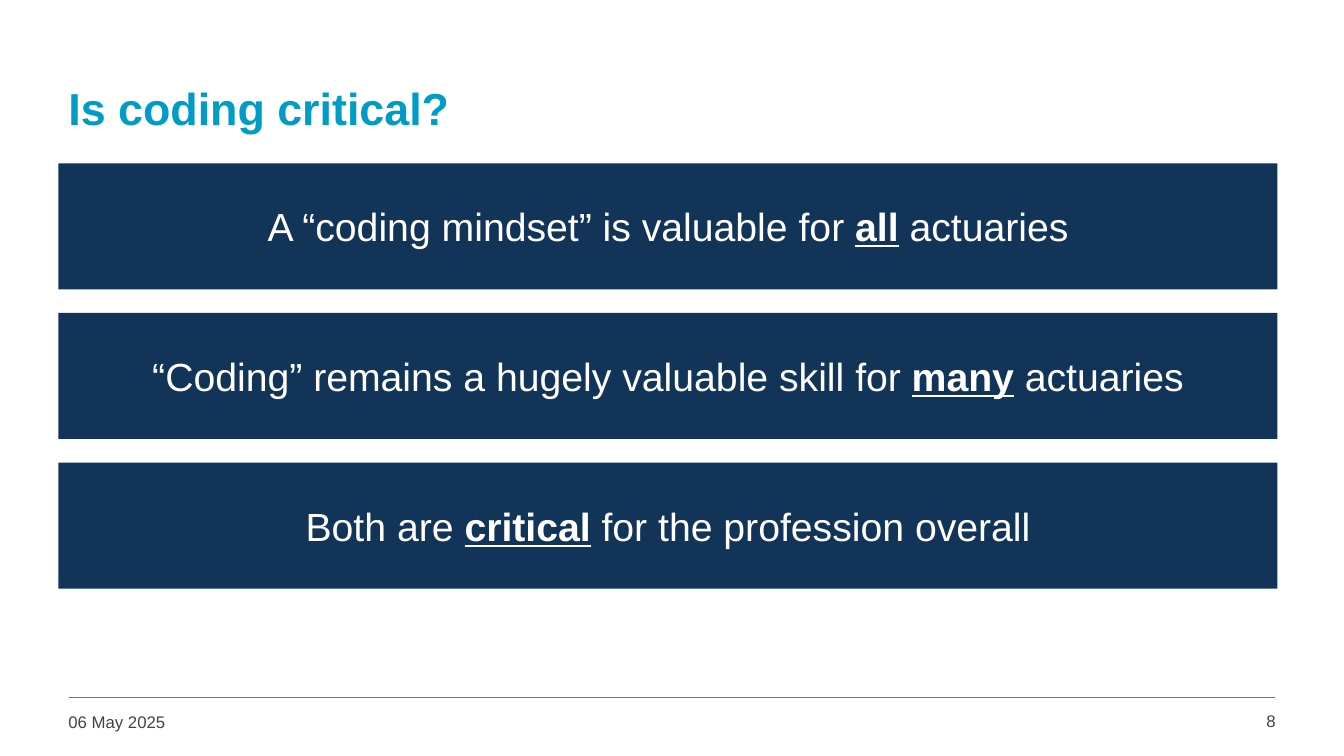
"""Build the slide that answers whether coding is critical for actuaries."""
from lxml import etree
from pptx import Presentation
from pptx import util as u
from pptx.dml.color import RGBColor
from pptx.enum import shapes, text
from pptx.oxml.ns import qn

TITLE = "Is coding critical?"
DATE = "06 May 2025"
PAGE = "8"
MESSAGES = [
    ("A “coding mindset” is valuable for ", "all", " actuaries"),
    ("“Coding” remains a hugely valuable skill for ", "many", " actuaries"),
    ("Both are ", "critical", " for the profession overall"),
]
COLOURS = {"accent": "009CC8", "navy": "113458", "white": "FFFFFF", "grey": "3F4548"}
LEFT, WIDTH = 0.58, 12.09
BAR_TOP, BAR_HEIGHT, BAR_STEP = 1.62, 1.25, 1.485
RULE_LEFT, RULE_RIGHT, RULE_Y = 0.68, 12.65, 6.92


def colour(name):
    return RGBColor.from_string(COLOURS[name])


def write(shape, parts, size, ink, bold=False, align=text.PP_ALIGN.LEFT,
          anchor=text.MSO_ANCHOR.MIDDLE):
    """Fill a shape with one paragraph; the second of its parts is emphasised."""
    frame = shape.text_frame
    frame.word_wrap = True
    frame.vertical_anchor = anchor
    paragraph = frame.paragraphs[0]
    paragraph.alignment = align
    for index, part in enumerate(parts):
        run = paragraph.add_run()
        run.text = part
        run.font.name = "Arial"
        run.font.size = u.Pt(size)
        run.font.color.rgb = colour(ink)
        run.font.bold = bold or index == 1
        run.font.underline = index == 1


def main():
    deck = Presentation()
    deck.slide_width, deck.slide_height = u.Inches(13.33), u.Inches(7.5)
    slide = deck.slides.add_slide(deck.slide_layouts[6])

    def place(*box):
        return [u.Inches(length) for length in box]

    rule = slide.shapes.add_connector(
        shapes.MSO_CONNECTOR.STRAIGHT, *place(RULE_LEFT, RULE_Y, RULE_RIGHT, RULE_Y))
    rule.line.color.rgb = colour("accent")
    rule.line.width = u.Pt(1)
    etree.SubElement(rule._element.spPr, qn("a:effectLst"))

    title = slide.shapes.add_textbox(*place(LEFT, 0.44, WIDTH, 1.25))
    write(title, [TITLE], 32, "accent", bold=True)
    date = slide.shapes.add_textbox(*place(LEFT, 7.01, 2.94, 0.36))
    write(date, [DATE], 12, "grey", anchor=text.MSO_ANCHOR.TOP)
    page = slide.shapes.add_textbox(*place(11.81, 7, 0.94, 0.37))
    write(page, [PAGE], 12, "grey", align=text.PP_ALIGN.RIGHT, anchor=text.MSO_ANCHOR.TOP)

    for row, message in enumerate(MESSAGES):
        bar = slide.shapes.add_shape(
            shapes.MSO_SHAPE.RECTANGLE,
            *place(LEFT, BAR_TOP + row * BAR_STEP, WIDTH, BAR_HEIGHT))
        bar.shadow.inherit = False
        bar.fill.solid()
        bar.fill.fore_color.rgb = colour("navy")
        bar.line.fill.background()
        write(bar, message, 28, "white", align=text.PP_ALIGN.CENTER)

    deck.save("out.pptx")


if __name__ == "__main__":
    main()
